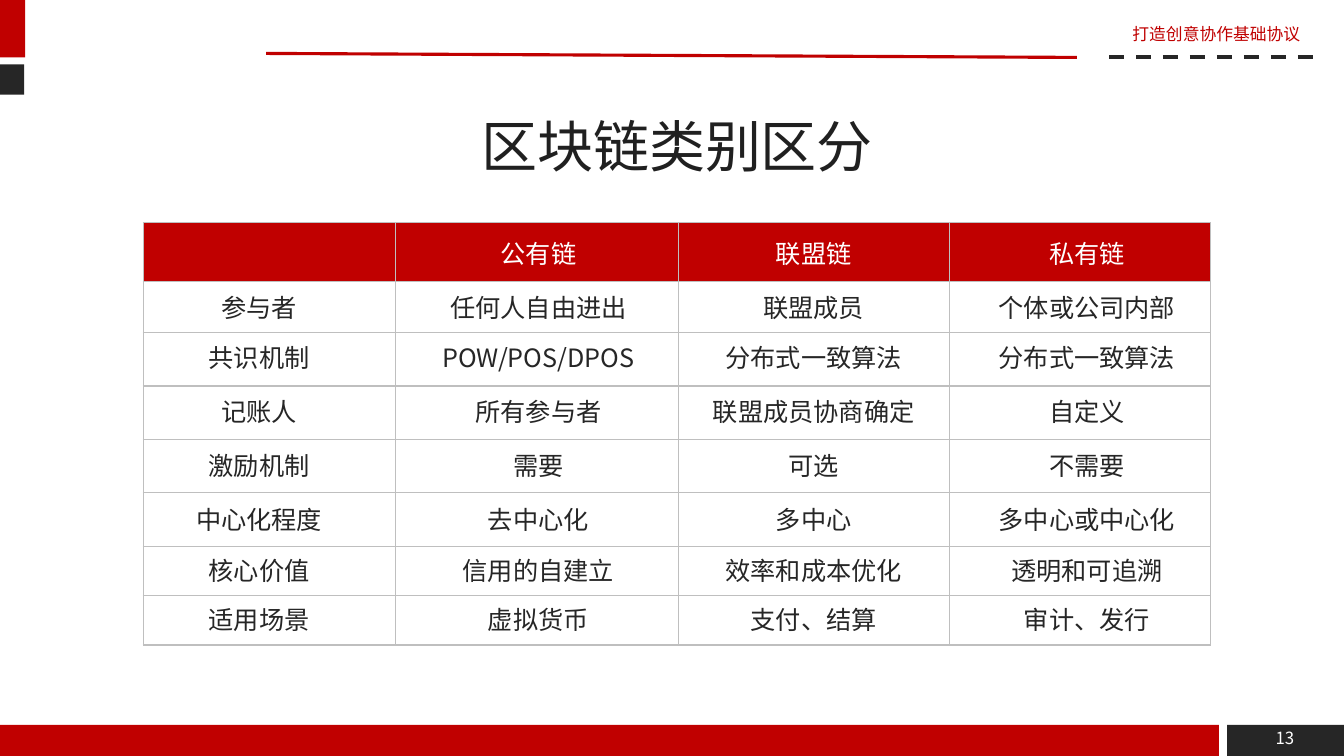
from lxml import etree
from pptx import Presentation
from pptx import util as u
from pptx.dml.color import RGBColor
from pptx.enum import dml, shapes, text
from pptx.oxml.ns import qn

FONT = "Noto Sans CJK SC"
COLORS = {"red": "C00000", "dark": "262626", "title": "202020",
          "white": "FFFFFF", "grid": "BFBFBF"}


def color(name):
    return RGBColor.from_string(COLORS[name])


def label(words, left, top, width, height, size, ink, wrap=False):
    box = slide.shapes.add_textbox(*map(u.Inches, (left, top, width, height)))
    frame = box.text_frame
    frame.word_wrap = wrap
    if wrap:
        frame.vertical_anchor = text.MSO_ANCHOR.MIDDLE
    else:
        frame.auto_size = text.MSO_AUTO_SIZE.SHAPE_TO_FIT_TEXT
    para = frame.paragraphs[0]
    para.alignment = text.PP_ALIGN.CENTER
    run = para.add_run()
    run.text = words
    run.font.size = u.Pt(size)
    run.font.color.rgb = color(ink)
    run.font.name = FONT
    east = etree.SubElement(run.font._element, qn("a:ea"))
    east.set("typeface", FONT)
    return para


deck = Presentation()
deck.slide_width = u.Inches(13.33)
deck.slide_height = u.Inches(7.5)
slide = deck.slides.add_slide(deck.slide_layouts[6])

bars = [
    (12.17, 7.19, 1.16, 0.31, "dark"),
    (-0.01, 7.19, 12.1, 0.31, "red"),
    (0, -0.01, 0.25, 0.58, "red"),
    (-0.01, 0.64, 0.25, 0.3, "dark"),
]
for *place, ink in bars:
    bar = slide.shapes.add_shape(shapes.MSO_SHAPE.RECTANGLE, *map(u.Inches, place))
    bar.shadow.inherit = False
    bar.fill.solid()
    bar.fill.fore_color.rgb = color(ink)
    bar.line.fill.background()

rules = [
    (2.64, 0.53, 10.68, 0.57, "red", 2.25, None),
    (11, 0.57, 13.12, 0.57, "dark", 2.75, dml.MSO_LINE.DASH),
]
for *ends, ink, weight, dash in rules:
    rule = slide.shapes.add_connector(shapes.MSO_CONNECTOR.STRAIGHT, *map(u.Inches, ends))
    rule.line.color.rgb = color(ink)
    rule.line.width = u.Pt(weight)
    if dash:
        rule.line.dash_style = dash
    etree.SubElement(rule._element.spPr, qn("a:effectLst"))

label("打造创意协作基础协议", 11.13, 0.19, 1.87, 0.3, 12, "red")
label("13", 12.33, 7.12, 0.83, 0.4, 12, "white", wrap=True)
title = label("区块链类别区分", 4.19, 1.07, 5.05, 0.82, 40, "title", wrap=True)
title.line_spacing = 0.9

rows = [
    ("", "公有链", "联盟链", "私有链"),
    ("参与者", "任何人自由进出", "联盟成员", "个体或公司内部"),
    ("共识机制", "POW/POS/DPOS", "分布式一致算法", "分布式一致算法"),
    ("记账人", "所有参与者", "联盟成员协商确定", "自定义"),
    ("激励机制", "需要", "可选", "不需要"),
    ("中心化程度", "去中心化", "多中心", "多中心或中心化"),
    ("核心价值", "信用的自建立", "效率和成本优化", "透明和可追溯"),
    ("适用场景", "虚拟货币", "支付、结算", "审计、发行"),
]
widths = [2.5, 2.81, 2.69, 2.59]
heights = [0.58, 0.51, 0.53, 0.53, 0.53, 0.53, 0.49, 0.49]
mids = [2.57, 5.34, 8.07, 10.78]
tops = [2.32, 2.85, 3.35, 3.88, 4.42, 4.95, 5.46, 5.95]

table = slide.shapes.add_table(len(rows), len(widths), u.Inches(1.42), u.Inches(2.21),
                               u.Inches(sum(widths)), u.Inches(sum(heights))).table
table.first_row = False
table.horz_banding = False
for col, width in zip(table.columns, widths):
    col.width = u.Inches(width)
for row, height in zip(table.rows, heights):
    row.height = u.Inches(height)

for i, row in enumerate(rows):
    for j, words in enumerate(row):
        cell = table.cell(i, j)
        if i == 0:
            cell.fill.solid()
            cell.fill.fore_color.rgb = color("red")
        else:
            cell.fill.background()
        props = cell._tc.get_or_add_tcPr()
        for k, side in enumerate(("lnL", "lnR", "lnT", "lnB")):
            edge = etree.Element(qn("a:" + side), w=str(u.Pt(1)))
            paint = etree.SubElement(edge, qn("a:solidFill"))
            etree.SubElement(paint, qn("a:srgbClr"), val=COLORS["grid"])
            props.insert(k, edge)

for i, row in enumerate(rows):
    for mid, words in zip(mids, row):
        if words:
            wide = 2.11 if words.isascii() else 0.2 + 0.25 * len(words)
            label(words, mid - wide / 2, tops[i], wide, 0.4, 18,
                  "dark" if i else "white")

deck.save("out.pptx")
